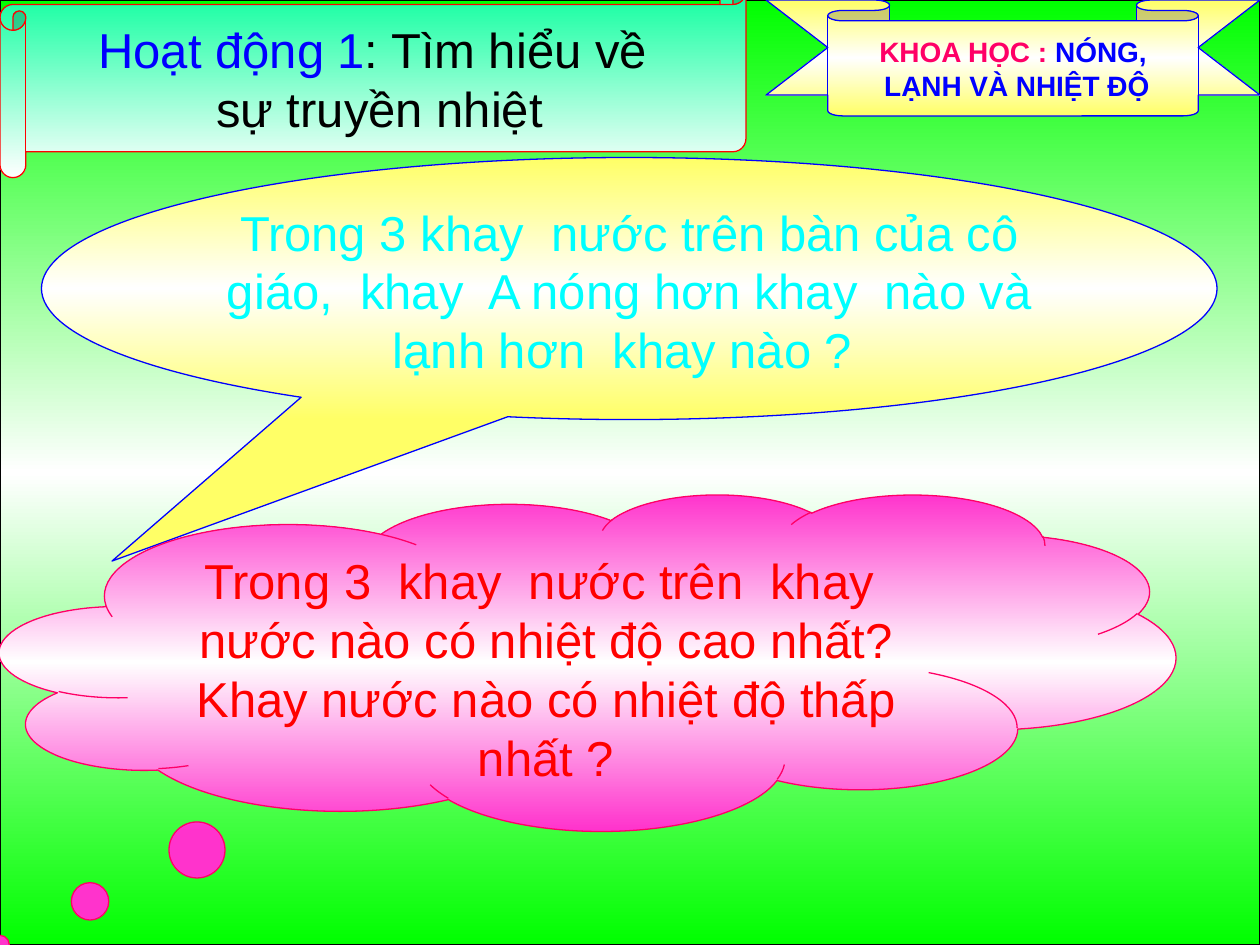
from copy import deepcopy

from pptx import Presentation
from pptx.dml.color import RGBColor
from pptx.enum.shapes import MSO_SHAPE
from pptx.enum.text import MSO_ANCHOR, PP_ALIGN
from pptx.oxml.ns import qn
from pptx.util import Inches, Pt

HUES = {
    "green": "00FF00",
    "mint": "00FF99",
    "white": "FFFFFF",
    "yellow": "FFFF66",
    "pink": "FF33CC",
    "rose": "FF0066",
    "red": "FF0000",
    "blue": "0000FF",
    "cyan": "00FFFF",
    "black": "000000",
}


def tint(name):
    return RGBColor.from_string(HUES[name])


def shade(shape, names):
    fill = shape.fill
    fill.gradient()
    fill.gradient_angle = 270
    stops = shape._element.spPr.find(".//" + qn("a:gsLst"))
    while len(stops) < len(names):
        stops.append(deepcopy(stops[0]))
    for i, (stop, name) in enumerate(zip(fill.gradient_stops, names)):
        stop.position = i / (len(names) - 1)
        stop.color.rgb = tint(name)


def add_form(slide, kind, box, adjust, names, edge):
    shape = slide.shapes.add_shape(kind, *[Inches(n) for n in box])
    for i, value in enumerate(adjust):
        shape.adjustments[i] = value
    shape.shadow.inherit = False
    shade(shape, names)
    shape.line.color.rgb = tint(edge)
    shape.line.width = Pt(0.75)
    return shape


def add_text(shape, lines, size=28, bold=False, wrap=True, anchor=MSO_ANCHOR.TOP):
    frame = shape.text_frame
    frame.word_wrap = wrap
    frame.vertical_anchor = anchor
    for i, line in enumerate(lines):
        para = frame.add_paragraph() if i else frame.paragraphs[0]
        para.alignment = PP_ALIGN.CENTER
        for text, hue in line:
            run = para.add_run()
            run.text = text
            run.font.name = "Arial"
            run.font.size = Pt(size)
            run.font.bold = bold
            run.font.color.rgb = tint(hue)


def main():
    deck = Presentation()
    deck.slide_width, deck.slide_height = Inches(10), Inches(7.5)
    slide = deck.slides.add_slide(deck.slide_layouts[6])
    gold = ("yellow", "white", "yellow")

    add_form(slide, MSO_SHAPE.HORIZONTAL_SCROLL, (0, 0, 10, 7.5), [0],
             ("green", "white", "green"), "black")

    speech = add_form(slide, MSO_SHAPE.OVAL_CALLOUT, (0.33, 1.25, 9.33, 2.08),
                      [-0.44, 1.04], gold, "blue")
    add_text(speech, [[("Trong 3 khay  nước trên bàn của cô giáo,  khay  A nóng hơn "
                        "khay  nào và lạnh hơn  khay nào ? ", "cyan")]])

    title = add_form(slide, MSO_SHAPE.HORIZONTAL_SCROLL, (0, -0.17, 5.92, 1.58),
                     [0.13], ("mint", "white"), "red")
    add_text(title, [[("Hoạt động 1", "blue"), (": Tìm hiểu về ", "black")],
                     [("sự truyền nhiệt", "black")]],
             wrap=False, anchor=MSO_ANCHOR.MIDDLE)

    ribbon = add_form(slide, MSO_SHAPE.DOWN_RIBBON, (6.08, 0, 3.92, 0.92),
                      [0.18, 0.75], gold, "blue")
    add_text(ribbon, [[("KHOA HỌC : ", "rose"), ("NÓNG,", "blue")],
                      [(" LẠNH VÀ NHIỆT ĐỘ", "blue")]],
             size=16, bold=True, wrap=False, anchor=MSO_ANCHOR.MIDDLE)

    cloud = add_form(slide, MSO_SHAPE.CLOUD_CALLOUT, (0, 3.92, 9.33, 2.67),
                     [-0.5, 0.84], ("pink", "white", "pink"), "rose")
    add_text(cloud, [[("Trong 3  khay  nước trên  khay  nước nào có nhiệt độ cao nhất? "
                       "Khay nước nào có nhiệt độ thấp nhất ?", "red")]])

    deck.save("out.pptx")


if __name__ == "__main__":
    main()
